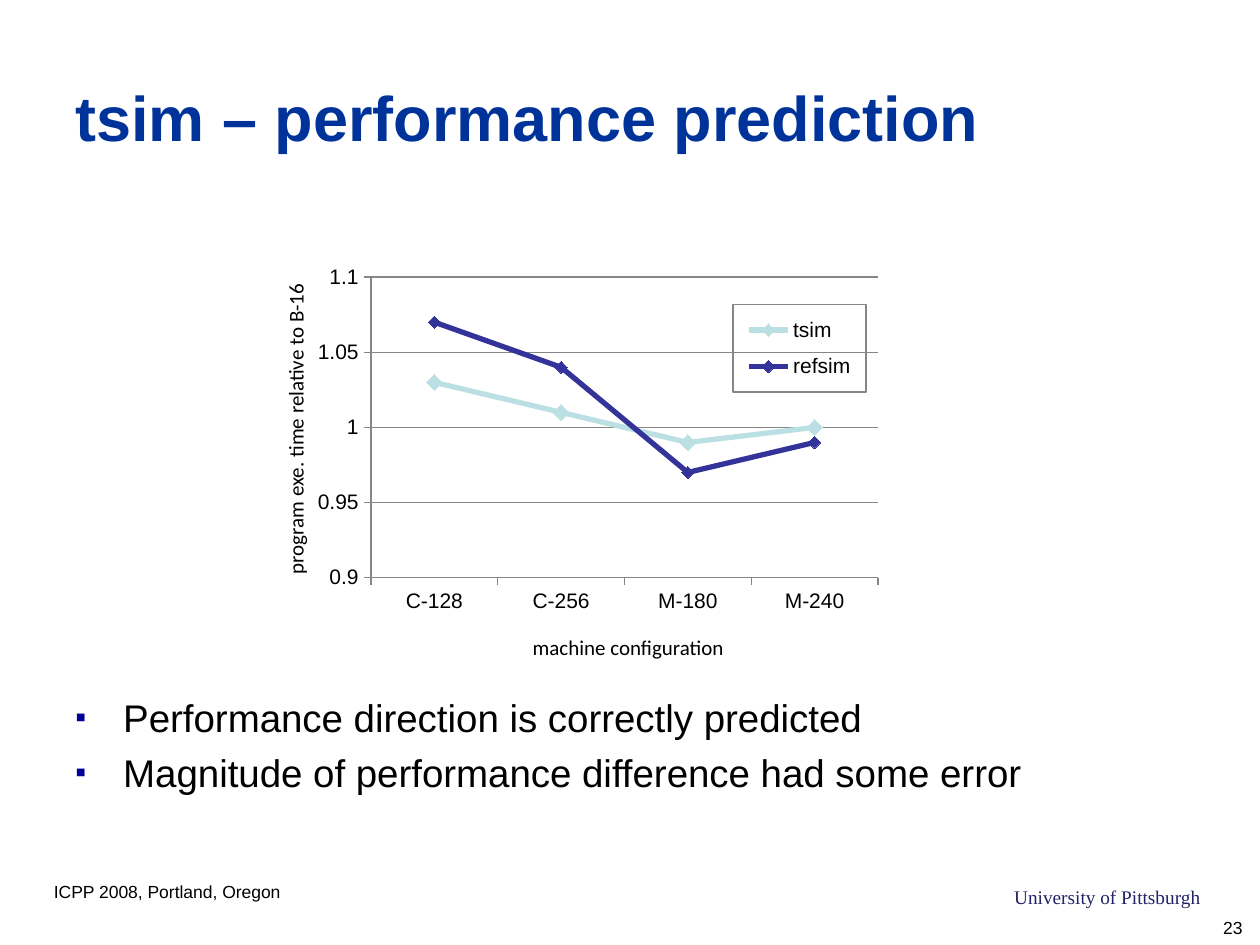
from lxml import etree
from pptx import Presentation
from pptx import util as u
from pptx.chart import data as chart_data
from pptx.dml.color import RGBColor
from pptx.enum import chart as ch
from pptx.enum import text
from pptx.oxml import parse_xml
from pptx.oxml.ns import nsdecls, qn

BLACK = RGBColor(0x00, 0x00, 0x00)
TITLE_BLUE = RGBColor(0x00, 0x33, 0x99)
BULLET_BLUE = RGBColor(0x00, 0x00, 0x99)
FOOTER_BLUE = RGBColor(0x22, 0x22, 0x67)
PALE_TEAL = RGBColor(0xBB, 0xE0, 0xE3)
INDIGO = RGBColor(0x33, 0x33, 0x99)
GRID_GRAY = RGBColor(0x86, 0x86, 0x86)

CONFIGURATIONS = ["C-128", "C-256", "M-180", "M-240"]
SIMULATORS = [
    ("tsim", [1.03, 1.01, 0.99, 1.0], PALE_TEAL, 9),
    ("refsim", [1.07, 1.04, 0.97, 0.99], INDIGO, 7),
]


def write(para, words, size=12, name="Arial", color=BLACK, bold=False):
    span = para.add_run()
    span.text = words
    span.font.size = u.Pt(size)
    span.font.name = name
    span.font.color.rgb = color
    span.font.bold = bold


def add_label(page, box, words, rotation=0, **style):
    label = page.shapes.add_textbox(*map(u.Inches, box))
    label.rotation = rotation
    label.text_frame.word_wrap = False
    write(label.text_frame.paragraphs[0], words, **style)


def add_title(page, box, words):
    title = page.shapes.title
    title.left, title.top, title.width, title.height = map(u.Inches, box)
    title.text_frame.vertical_anchor = text.MSO_ANCHOR.MIDDLE
    para = title.text_frame.paragraphs[0]
    para.alignment = text.PP_ALIGN.LEFT
    write(para, words, size=36, color=TITLE_BLUE, bold=True)


def add_bullets(page, box, lines):
    frame = page.shapes.add_textbox(*map(u.Inches, box)).text_frame
    frame.word_wrap = True
    for index, line in enumerate(lines):
        para = frame.add_paragraph() if index else frame.paragraphs[0]
        properties = para._p.get_or_add_pPr()
        properties.set("marL", str(u.Inches(0.38)))
        properties.set("indent", str(u.Inches(-0.38)))
        color = etree.SubElement(properties, qn("a:buClr"))
        etree.SubElement(color, qn("a:srgbClr"), val=str(BULLET_BLUE))
        etree.SubElement(properties, qn("a:buSzPct"), val="80000")
        etree.SubElement(properties, qn("a:buFont"), typeface="Arial")
        etree.SubElement(properties, qn("a:buChar"), char="▪")
        if index:
            para.space_before = u.Pt(5)
        write(para, line, size=22)


def manual_layout(box, inner=False):
    target = '<c:layoutTarget val="inner"/>' if inner else ""
    sizes = "".join(f'<c:{key} val="{value}"/>' for key, value in zip("xywh", box))
    return parse_xml(
        f'<c:layout {nsdecls("c")}><c:manualLayout>{target}'
        '<c:xMode val="edge"/><c:yMode val="edge"/>'
        f"{sizes}</c:manualLayout></c:layout>"
    )


def style_series(series, color, marker_size):
    series.smooth = False
    series.format.line.color.rgb = color
    series.format.line.width = u.Pt(3)
    marker = series.marker
    marker.style = ch.XL_MARKER_STYLE.DIAMOND
    marker.size = marker_size
    marker.format.fill.solid()
    marker.format.fill.fore_color.rgb = color
    marker.format.line.color.rgb = color


def style_legend(chart):
    chart.has_legend = True
    legend = chart.legend
    legend.position = ch.XL_LEGEND_POSITION.RIGHT
    legend.include_in_layout = True
    element = legend._element
    for old in element.findall(qn("c:layout")):
        element.remove(old)
    element.find(qn("c:legendPos")).addnext(manual_layout((0.72, 0.14, 0.22, 0.22)))
    border = parse_xml(
        f'<c:spPr {nsdecls("c", "a")}><a:noFill/><a:ln w="9525"><a:solidFill>'
        f'<a:srgbClr val="{GRID_GRAY}"/></a:solidFill></a:ln></c:spPr>'
    )
    element.find(qn("c:overlay")).addnext(border)


def add_performance_chart(page, box):
    data = chart_data.CategoryChartData()
    data.categories = CONFIGURATIONS
    for name, values, _, _ in SIMULATORS:
        data.add_series(name, values)
    frame = page.shapes.add_chart(
        ch.XL_CHART_TYPE.LINE_MARKERS, *map(u.Inches, box), data
    )
    chart = frame.chart
    chart.has_title = False
    chart.font.size = u.Pt(12)
    chart.font.name = "Arial"
    chart.font.color.rgb = BLACK
    plot = chart.plots[0]
    plot.vary_by_categories = False
    for series, (_, _, color, marker_size) in zip(plot.series, SIMULATORS):
        style_series(series, color, marker_size)

    values = chart.value_axis
    values.minimum_scale, values.maximum_scale = 0.9, 1.1
    values.major_unit = 0.05
    values.has_major_gridlines = True
    values.major_gridlines.format.line.color.rgb = GRID_GRAY
    values.tick_labels.number_format = "General"
    values.tick_labels.number_format_is_linked = False
    for axis in (values, chart.category_axis):
        axis.major_tick_mark = ch.XL_TICK_MARK.OUTSIDE
        axis.format.line.color.rgb = GRID_GRAY
    chart.category_axis.tick_label_position = ch.XL_TICK_LABEL_POSITION.LOW

    area = chart._chartSpace.chart.plotArea
    for old in area.findall(qn("c:layout")):
        area.remove(old)
    area.insert(0, manual_layout((0.12, 0.07, 0.84, 0.76), inner=True))
    style_legend(chart)


def add_footer(page):
    add_label(page, (0.33, 6.94, 2, 0.27), "ICPP 2008, Portland, Oregon", size=10)
    add_label(page, (7.95, 6.98, 1.69, 0.29), "University of Pittsburgh",
              size=11, name="Times New Roman", color=FOOTER_BLUE)
    add_label(page, (9.61, 7.23, 0.39, 0.27), "23", size=10)


def main():
    deck = Presentation()
    deck.slide_width, deck.slide_height = u.Inches(10), u.Inches(7.5)
    page = deck.slides.add_slide(deck.slide_layouts[5])
    add_footer(page)
    add_title(page, (0.5, 0.3, 9, 1.25), "tsim – performance prediction")
    add_bullets(page, (0.5, 5.46, 9, 1.25), [
        "Performance direction is correctly predicted",
        "Magnitude of performance difference had some error",
    ])
    add_performance_chart(page, (2.37, 1.98, 4.79, 3.14))
    add_label(page, (1.08, 3.24, 2.53, 0.3), "program exe. time relative to B-16",
              rotation=270, name="Calibri")
    add_label(page, (4.13, 4.99, 1.73, 0.3), "machine configuration", name="Calibri")
    deck.save("out.pptx")


if __name__ == "__main__":
    main()
